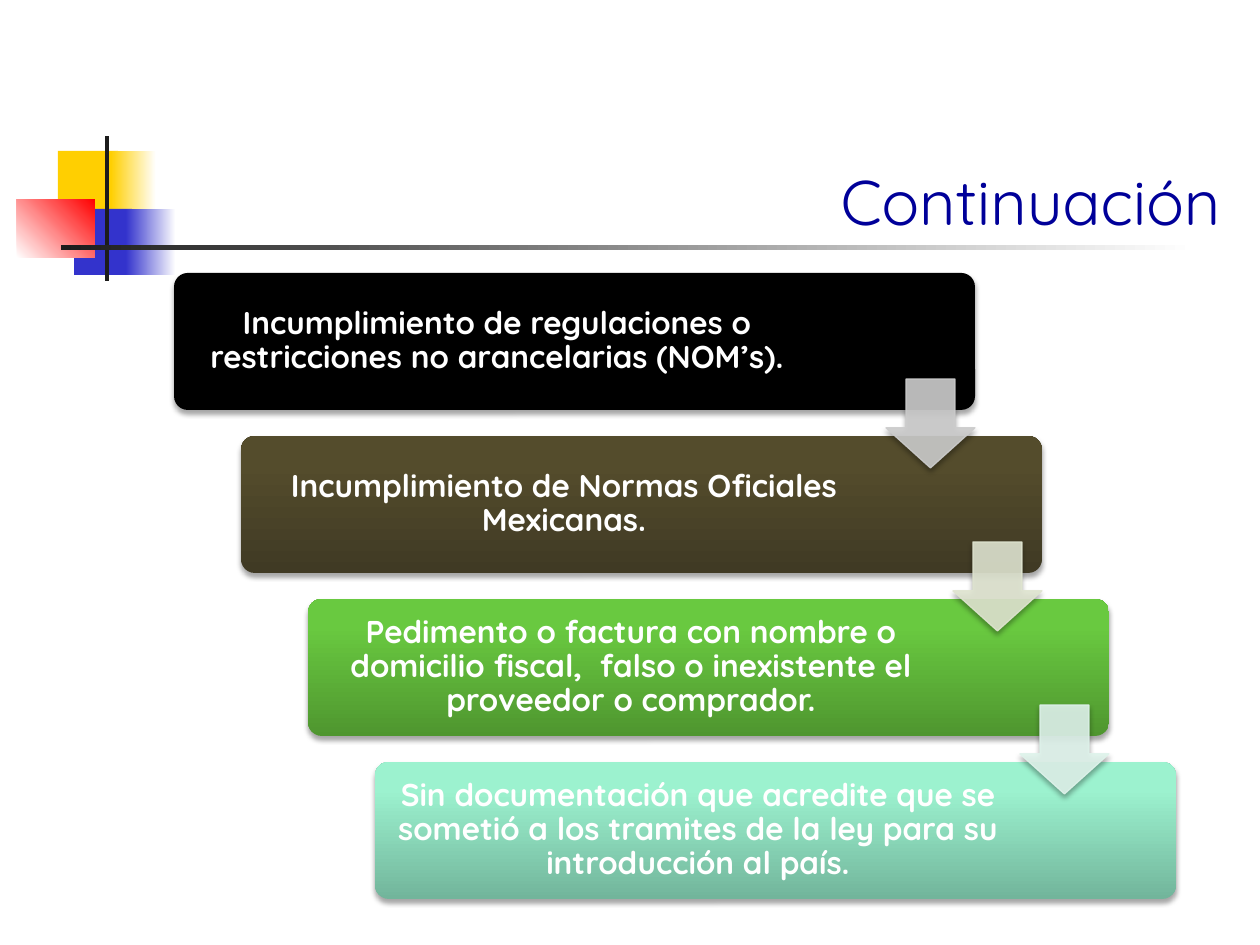
"""Build the "Continuación" slide: four cascading cards linked by down arrows."""
from lxml import etree
from pptx import Presentation
from pptx.dml.color import RGBColor
from pptx.enum.shapes import MSO_SHAPE
from pptx.enum.text import MSO_ANCHOR, PP_ALIGN
from pptx.oxml.ns import qn
from pptx.util import Emu, Pt

RECT = MSO_SHAPE.RECTANGLE
ROUNDED = MSO_SHAPE.ROUNDED_RECTANGLE
DOWN_ARROW = MSO_SHAPE.DOWN_ARROW
BOTTOM, MIDDLE = MSO_ANCHOR.BOTTOM, MSO_ANCHOR.MIDDLE
CENTER, RIGHT = PP_ALIGN.CENTER, PP_ALIGN.RIGHT

THEME = {
    "font": "Quicksand",
    "title_size": 36,
    "card_size": 18,
    "title": "000099",
    "card_text": "FFFFFF",
    "yellow": "FFCF01",
    "blue": "3333CC",
    "red": "FF0000",
    "ink": "1C1C1C",
    "paper": "FFFFFF",
    "shadow": "000000",
    "cards": [("000000", "000000"), ("403A24", "544C2C"),
              ("4F962F", "69C940"), ("72B59B", "9CF2CF")],
    "arrows": ["CCCCCC", "DFE4D0", "DFF3EB"],
}

TITLE = "Continuación"
TITLE_BOX = (159, 86, 1074, 158)
REASONS = [
    "Incumplimiento de regulaciones o restricciones no arancelarias (NOM’s).",
    "Incumplimiento de Normas Oficiales Mexicanas.",
    "Pedimento o factura con nombre o domicilio fiscal,  falso o inexistente el "
    "proveedor o comprador.",
    "Sin documentación que acredite que se sometió a los tramites de la ley para su "
    "introducción al país.",
]
ORNAMENT = [
    ((58, 151, 60, 66), ("yellow",), 0),
    ((111, 151, 45, 66), ("yellow", "paper"), 0),
    ((74, 209, 58, 66), ("blue",), 0),
    ((126, 209, 50, 66), ("blue", "paper"), 0),
    ((17, 199, 78, 59), ("paper", "red"), 45),
    ((105, 136, 4, 145), ("ink",), 0),
    ((61, 245, 1134, 5), ("ink", "paper"), 0),
]

CARD_LEFT, CARD_TOP, CARD_WIDTH, CARD_HEIGHT = 174, 273, 801, 137
STEP_X, STEP_Y = 67, 163
ARROW_SIZE, ARROW_OVERLAP = 89, 31
INSET, ARROW_MARGIN = 9, 164


def px(length):
    return Emu(round(length * 914400 / 126))


def rgb(value):
    return RGBColor.from_string(value)


def paint(fill, colors, angle=0, end=1):
    if len(set(colors)) == 1:
        fill.solid()
        fill.fore_color.rgb = rgb(colors[0])
        return
    fill.gradient()
    fill.gradient_angle = angle
    for stop, color, position in zip(fill.gradient_stops, colors, (0, end)):
        stop.color.rgb = rgb(color)
        stop.position = position


def add_block(slide, kind, box, colors, angle=0, end=1):
    block = slide.shapes.add_shape(kind, *map(px, box))
    block.shadow.inherit = False
    block.line.fill.background()
    paint(block.fill, colors, angle, end)
    return block


def add_color_alpha(color, percent):
    etree.SubElement(color, qn("a:alpha"), val=str(percent * 1000))


def drop_shadow(block):
    effects = block.element.spPr.find(qn("a:effectLst"))
    shadow = etree.SubElement(effects, qn("a:outerShdw"), blurRad=str(Pt(3.1)),
                              dist=str(Pt(1.8)), dir="5400000", rotWithShape="0")
    color = etree.SubElement(shadow, qn("a:srgbClr"), val=THEME["shadow"])
    add_color_alpha(color, 35)


def write(frame, text, size, color, align, anchor, bold=False):
    frame.word_wrap = True
    frame.vertical_anchor = anchor
    paragraph = frame.paragraphs[0]
    paragraph.text = text
    paragraph.alignment = align
    paragraph.font.name = THEME["font"]
    paragraph.font.size = Pt(size)
    paragraph.font.bold = bold
    paragraph.font.color.rgb = rgb(color)
    return paragraph


def add_title(slide):
    title = slide.shapes.title
    title.left, title.top, title.width, title.height = map(px, TITLE_BOX)
    write(title.text_frame, TITLE, THEME["title_size"], THEME["title"], RIGHT, BOTTOM)


def add_card(slide, index, reason):
    box = (CARD_LEFT + index * STEP_X, CARD_TOP + index * STEP_Y, CARD_WIDTH, CARD_HEIGHT)
    card = add_block(slide, ROUNDED, box, THEME["cards"][index], 90, 0.8)
    card.adjustments[0] = 0.1
    drop_shadow(card)
    frame = card.text_frame
    frame.margin_left = frame.margin_top = frame.margin_bottom = px(INSET)
    frame.margin_right = px(ARROW_MARGIN)
    paragraph = write(frame, reason, THEME["card_size"], THEME["card_text"],
                      CENTER, MIDDLE, bold=True)
    paragraph.line_spacing = 0.9


def add_arrow(slide, index, color):
    left = CARD_LEFT + CARD_WIDTH - ARROW_SIZE + index * STEP_X
    top = CARD_TOP + CARD_HEIGHT - ARROW_OVERLAP + index * STEP_Y
    arrow = add_block(slide, DOWN_ARROW, (left, top, ARROW_SIZE, ARROW_SIZE), (color,))
    arrow.adjustments[0], arrow.adjustments[1] = 0.55, 0.45
    arrow.line.color.rgb = rgb(color)
    arrow.line.width = Pt(0.75)
    for tint in arrow.element.spPr.iter(qn("a:srgbClr")):
        add_color_alpha(tint, 90)
    drop_shadow(arrow)


def main():
    deck = Presentation()
    deck.slide_width, deck.slide_height = px(1260), px(945)
    slide = deck.slides.add_slide(deck.slide_layouts[5])
    for box, names, angle in ORNAMENT:
        add_block(slide, RECT, box, [THEME[name] for name in names], angle)
    add_title(slide)
    for index, reason in enumerate(REASONS):
        add_card(slide, index, reason)
    for index, color in enumerate(THEME["arrows"]):
        add_arrow(slide, index, color)
    deck.save("out.pptx")


if __name__ == "__main__":
    main()
